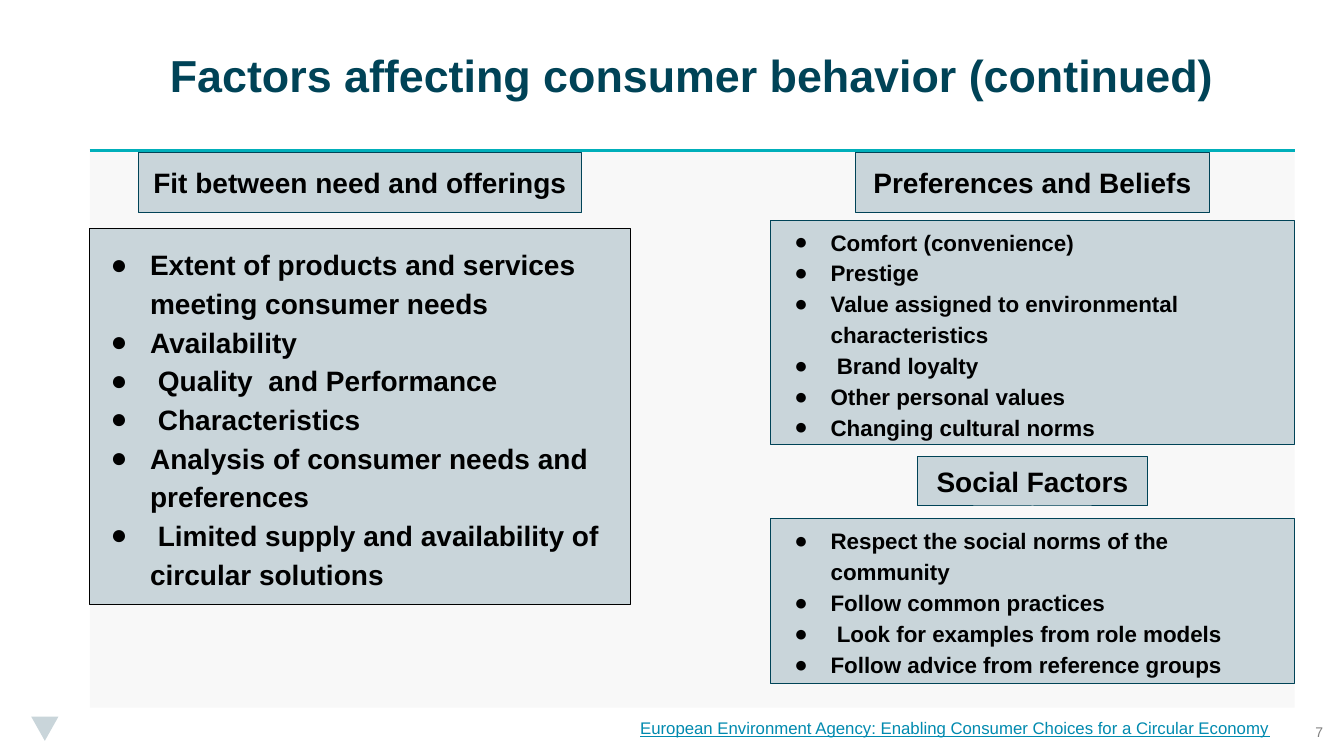
from lxml import etree
from pptx import Presentation
from pptx.dml.color import RGBColor
from pptx.enum.shapes import MSO_CONNECTOR, MSO_SHAPE
from pptx.enum.text import MSO_ANCHOR, PP_ALIGN
from pptx.oxml.ns import qn
from pptx.util import Inches, Pt

RECTANGLE = MSO_SHAPE.RECTANGLE
TRIANGLE_DOWN = MSO_SHAPE.FLOWCHART_MERGE
STRAIGHT = MSO_CONNECTOR.STRAIGHT
MIDDLE, TOP = MSO_ANCHOR.MIDDLE, MSO_ANCHOR.TOP
LEFT, CENTER = PP_ALIGN.LEFT, PP_ALIGN.CENTER

COLORS = {
    "title": "004357",
    "rule": "00AFBA",
    "panel": "F2F2F2",
    "box": "C9D5DA",
    "text": "000000",
    "number": "7F7F7F",
    "source": "008AAF",
}
FONT = "Arial"
SLIDE_WIDTH, SLIDE_HEIGHT = 13.33, 7.5
MARGIN, CONTENT_WIDTH = 0.89, 11.95
CONTENT_RIGHT = MARGIN + CONTENT_WIDTH
PANEL_TOP, PANEL_HEIGHT = 1.49, 5.53
FOOTER_TOP = PANEL_TOP + PANEL_HEIGHT
LEFT_WIDTH, RIGHT_WIDTH = 5.36, 5.2
LEFT_COLUMN = (MARGIN, LEFT_WIDTH)
RIGHT_COLUMN = (CONTENT_RIGHT - RIGHT_WIDTH, RIGHT_WIDTH)

presentation = Presentation()
presentation.slide_width = Inches(SLIDE_WIDTH)
presentation.slide_height = Inches(SLIDE_HEIGHT)
slide = presentation.slides.add_slide(presentation.slide_layouts[6])


def add_box(kind, left, top, width, height, fill, outline=None):
    shape = slide.shapes.add_shape(
        kind, Inches(left), Inches(top), Inches(width), Inches(height))
    shape.shadow.inherit = False
    shape.fill.solid()
    shape.fill.fore_color.rgb = RGBColor.from_string(COLORS[fill])
    if outline:
        shape.line.color.rgb = RGBColor.from_string(COLORS[outline])
        shape.line.width = Pt(0.75)
    else:
        shape.line.fill.background()
    return shape


def write_text(shape, lines, size, color, bold=False, align=CENTER, anchor=MIDDLE, inset=0.1):
    frame = shape.text_frame
    frame.word_wrap = True
    frame.vertical_anchor = anchor
    frame.margin_left = frame.margin_right = Inches(inset)
    frame.margin_top = frame.margin_bottom = Inches(inset)
    for index, line in enumerate(lines):
        paragraph = frame.add_paragraph() if index else frame.paragraphs[0]
        paragraph.alignment = align
        run = paragraph.add_run()
        run.text = line
        run.font.name = FONT
        run.font.size = Pt(size)
        run.font.bold = bold
        run.font.color.rgb = RGBColor.from_string(COLORS[color])
    return frame.paragraphs


add_box(TRIANGLE_DOWN, 0.31, 7.11, 0.27, 0.24, "box")

panel = add_box(RECTANGLE, MARGIN, PANEL_TOP, CONTENT_WIDTH, PANEL_HEIGHT, "panel")
panel_color = panel.fill._xPr.find(qn("a:solidFill"))[0]
etree.SubElement(panel_color, qn("a:alpha"), val="49000")

rule = slide.shapes.add_connector(
    STRAIGHT, Inches(MARGIN), Inches(PANEL_TOP), Inches(CONTENT_RIGHT), Inches(PANEL_TOP))
rule.line.color.rgb = RGBColor.from_string(COLORS["rule"])
rule.line.width = Pt(2)
etree.SubElement(rule._element.spPr, qn("a:effectLst"))

title = slide.shapes.add_textbox(
    Inches(MARGIN), Inches(0.23), Inches(CONTENT_WIDTH), Inches(1.02))
write_text(title, ["Factors affecting consumer behavior (continued)"], 32, "title", True, inset=0)

number = slide.shapes.add_textbox(
    Inches(CONTENT_RIGHT), Inches(FOOTER_TOP), Inches(0.49), Inches(0.49))
write_text(number, ["7"], 10, "number", inset=0)

headings = [
    ("Fit between need and offerings", LEFT_COLUMN, 1.51, 4.4, 0.6),
    ("Preferences and Beliefs", RIGHT_COLUMN, 1.51, 3.51, 0.6),
    ("Social Factors", RIGHT_COLUMN, 4.53, 2.28, 0.49),
]
for heading, (column_left, column_width), top, width, height in headings:
    left = column_left + (column_width - width) / 2
    box = add_box(RECTANGLE, left, top, width, height, "box", "title")
    write_text(box, [heading], 20, "text", True)

factor_lists = [
    (LEFT_COLUMN, 2.27, 3.73, "text", 20, 0.39, [
        "Extent of products and services meeting consumer needs",
        "Availability",
        " Quality  and Performance",
        " Characteristics",
        "Analysis of consumer needs and preferences",
        " Limited supply and availability of circular solutions",
    ]),
    (RIGHT_COLUMN, 2.19, 2.22, "title", 16, 0.36, [
        "Comfort (convenience)",
        "Prestige",
        "Value assigned to environmental characteristics",
        " Brand loyalty",
        "Other personal values",
        "Changing cultural norms",
    ]),
    (RIGHT_COLUMN, 5.14, 1.64, "title", 16, 0.36, [
        "Respect the social norms of the community",
        "Follow common practices",
        " Look for examples from role models",
        "Follow advice from reference groups",
    ]),
]
for (left, width), top, height, outline, size, hanging, factors in factor_lists:
    box = add_box(RECTANGLE, left, top, width, height, "box", outline)
    for paragraph in write_text(box, factors, size, "text", True, LEFT):
        paragraph.line_spacing = 1.15
        properties = paragraph._p.get_or_add_pPr()
        properties.set("marL", str(Inches(0.5)))
        properties.set("indent", str(-Inches(hanging)))
        bullet_color = etree.SubElement(properties, qn("a:buClr"))
        etree.SubElement(bullet_color, qn("a:srgbClr"), val=COLORS["text"])
        etree.SubElement(properties, qn("a:buFont"), typeface=FONT)
        etree.SubElement(properties, qn("a:buChar"), char="●")

source = slide.shapes.add_textbox(
    Inches(MARGIN + LEFT_WIDTH), Inches(FOOTER_TOP),
    Inches(CONTENT_WIDTH - LEFT_WIDTH), Inches(0.4))
source_line = write_text(
    source,
    ["European Environment Agency: Enabling Consumer Choices for a Circular Economy"],
    12, "source", align=LEFT, anchor=TOP)[0]
source_line.space_before = Pt(10)
source_line.runs[0].font.underline = True

presentation.save("out.pptx")
